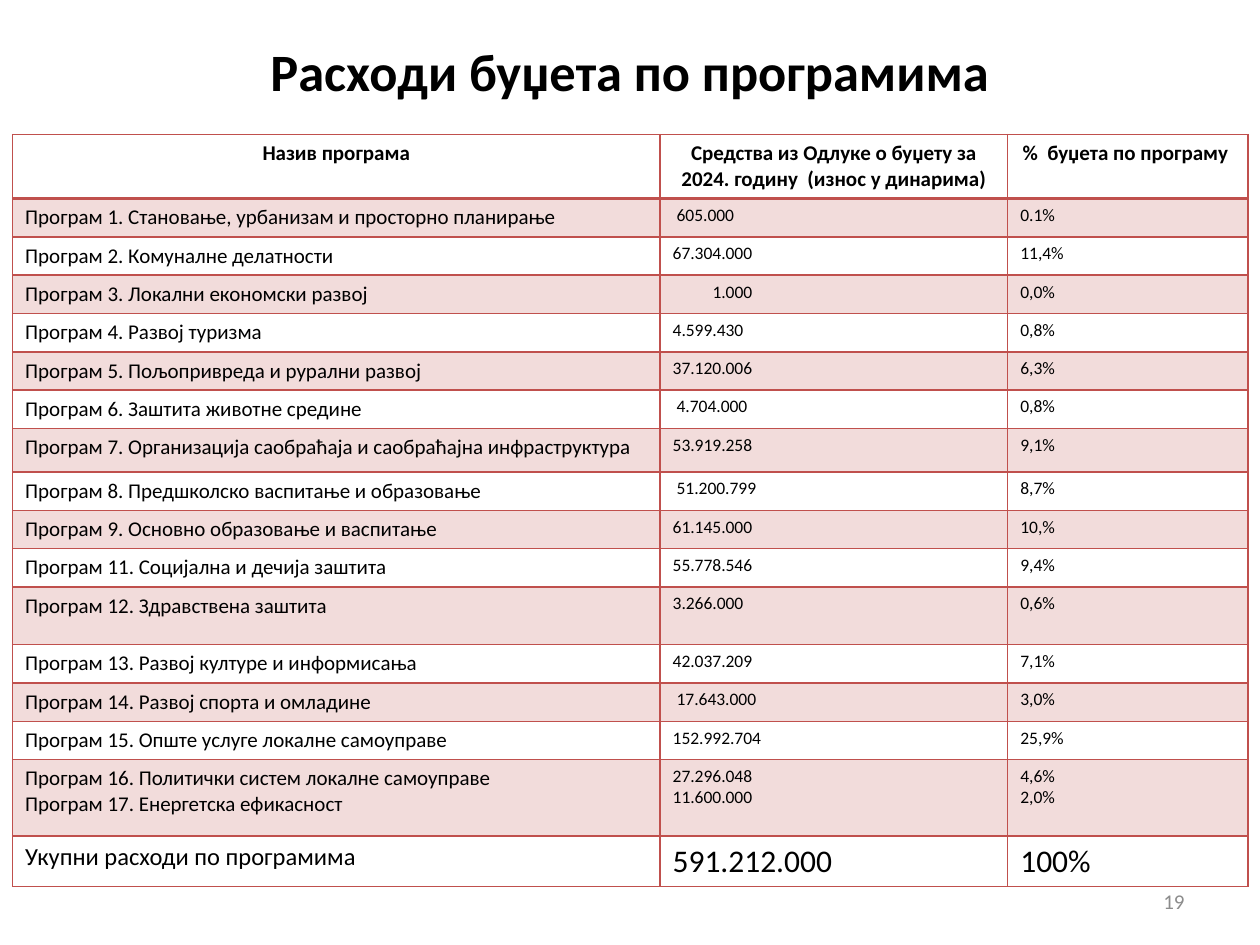
import pptx
import pptx.util
import pptx.dml.color
import pptx.enum.text
import pptx.oxml
import pptx.oxml.ns
from dataclasses import dataclass

Pt = pptx.util.Pt
RGB = pptx.dml.color.RGBColor.from_string
ALIGN = pptx.enum.text.PP_ALIGN
MIDDLE = pptx.enum.text.MSO_ANCHOR.MIDDLE


@dataclass(frozen=True)
class Theme:
    font: str = "Calibri"
    ink: str = "000000"
    muted: str = "8C8C8C"
    red: str = "C0504D"
    tint: int = 20
    title: int = 30
    body: int = 12
    value: int = 10
    label: int = 14
    total: int = 18


THEME = Theme()
COLS = (370, 198.7, 137.2)
HEAD = ("Назив програма",
        "Средства из Одлуке о буџету за 2024. годину  (износ у динарима)",
        "%  буџета по програму ")
ROW = 21.9
# name, amount, share, row height
ROWS = (
    ("Програм 1. Становање, урбанизам и просторно планирање", " 605.000", "0.1%", ROW),
    ("Програм 2. Комуналне делатности", "67.304.000", "11,4%", ROW),
    ("Програм 3. Локални економски развој", "1.000", "0,0%", ROW),
    ("Програм 4. Развој туризма", "4.599.430", "0,8%", ROW),
    ("Програм 5. Пољопривреда и рурални развој", "37.120.006", "6,3%", ROW),
    ("Програм 6. Заштита животне средине", " 4.704.000", "0,8%", ROW),
    ("Програм 7. Организација саобраћаја и саобраћајна инфраструктура",
     "53.919.258", "9,1%", 25),
    ("Програм 8. Предшколско васпитање и образовање", " 51.200.799", "8,7%", ROW),
    ("Програм 9. Основно образовање и васпитање", "61.145.000", "10,%", ROW),
    ("Програм 11. Социјална и дечија заштита", "55.778.546", "9,4%", ROW),
    ("Програм 12. Здравствена заштита", "3.266.000", "0,6%", 33),
    ("Програм 13. Развој културе и информисања", "42.037.209", "7,1%", ROW),
    ("Програм 14. Развој спорта и омладине", " 17.643.000", "3,0%", ROW),
    ("Програм 15. Опште услуге локалне самоуправе", "152.992.704", "25,9%", ROW),
    ("Програм 16. Политички систем локалне самоуправе\nПрограм 17. Енергетска ефикасност",
     "27.296.048\n11.600.000", "4,6%\n2,0%", 43.6),
)
TOTAL = ("Укупни расходи по програмима", "591.212.000", "100%")


def write(frame, text, size, color=THEME.ink, bold=False, align=ALIGN.LEFT):
    frame.text = text
    for para in frame.paragraphs:
        para.alignment = align
        font = para.font
        font.name, font.size, font.bold = THEME.font, Pt(size), bold
        font.color.rgb = RGB(color)


def add_text(slide, box, text, size, **style):
    frame = slide.shapes.add_textbox(*map(Pt, box)).text_frame
    frame.word_wrap = True
    frame.vertical_anchor = MIDDLE
    write(frame, text, size, **style)


def shade(cell):
    """Fill the cell with the see-through band colour."""
    cell.fill.solid()
    cell.fill.fore_color.rgb = RGB(THEME.red)
    color = cell.fill._xPr.find(".//" + pptx.oxml.ns.qn("a:srgbClr"))
    alpha = pptx.oxml.parse_xml(
        f'<a:alpha {pptx.oxml.ns.nsdecls("a")} val="{THEME.tint * 1000}"/>')
    color.append(alpha)


def edge(cell, top, base):
    """Rule all four sides; top and base are line widths in points."""
    sides = (("L", 1), ("R", 1), ("T", top), ("B", base))
    for spot, (side, width) in enumerate(sides):
        line = pptx.oxml.parse_xml(
            f'<a:ln{side} {pptx.oxml.ns.nsdecls("a")} w="{Pt(width)}">'
            f'<a:solidFill><a:srgbClr val="{THEME.red}"/></a:solidFill></a:ln{side}>')
        cell._tc.get_or_add_tcPr().insert(spot, line)


def fill_row(table, index, texts, sizes, height, band=False, **style):
    table.rows[index].height = Pt(height)
    for col, (text, size) in enumerate(zip(texts, sizes)):
        cell = table.cell(index, col)
        write(cell.text_frame, text, size, **style)
        if band:
            shade(cell)
        else:
            cell.fill.background()
        edge(cell, 2 if index == 1 else 1, 2 if index == 0 else 1)


def add_budget(slide):
    count = len(ROWS) + 2
    table = slide.shapes.add_table(
        count, len(COLS), Pt(7.2), Pt(77), Pt(sum(COLS)), Pt(430)).table
    table.first_row = table.horz_banding = False
    for col, width in zip(table.columns, COLS):
        col.width = Pt(width)

    fill_row(table, 0, HEAD, [THEME.body] * 3, 36.5, bold=True, align=ALIGN.CENTER)
    sizes = (THEME.body, THEME.value, THEME.value)
    for index, (*texts, height) in enumerate(ROWS, 1):
        fill_row(table, index, texts, sizes, height, band=index % 2 == 1)
    fill_row(table, count - 1, TOTAL, (THEME.label, THEME.total, THEME.total), 29)
    table.cell(3, 1).margin_left = Pt(30)


def main():
    deck = pptx.Presentation()
    deck.slide_width, deck.slide_height = Pt(720), Pt(540)
    slide = deck.slides.add_slide(deck.slide_layouts[6])
    add_text(slide, (53.3, 9.4, 613.4, 61.2), "Расходи буџета по програмима",
             THEME.title, bold=True, align=ALIGN.CENTER)
    add_text(slide, (516, 500.5, 168, 28.8), "19", THEME.body,
             color=THEME.muted, align=ALIGN.RIGHT)
    add_budget(slide)
    deck.save("out.pptx")


if __name__ == "__main__":
    main()
